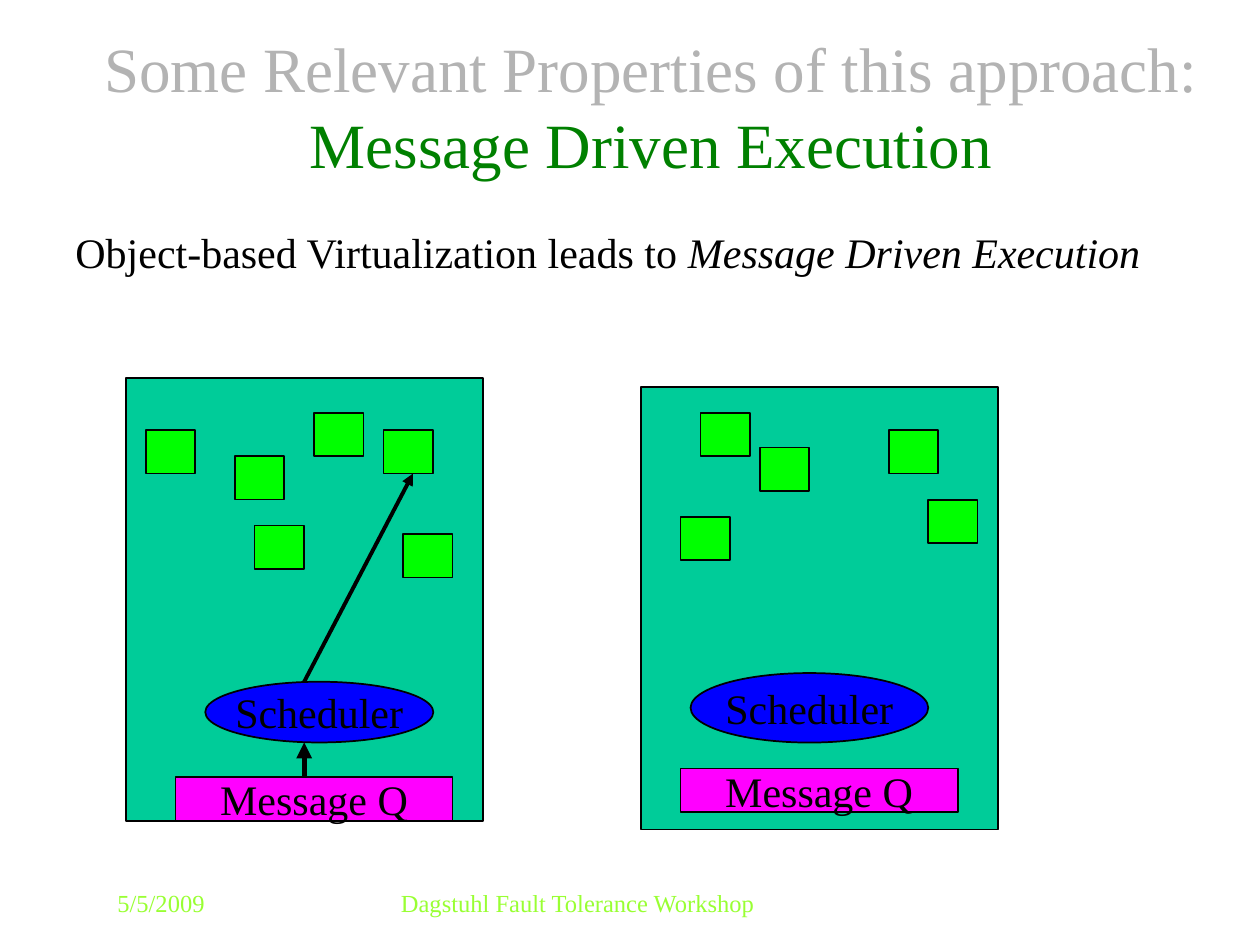
from lxml import etree
from pptx import Presentation
from pptx.dml.color import RGBColor
from pptx.enum.shapes import MSO_CONNECTOR, MSO_SHAPE
from pptx.enum.text import MSO_ANCHOR, PP_ALIGN
from pptx.oxml.ns import qn
from pptx.util import Pt

FONT = "Times New Roman"
BLACK = RGBColor(0x00, 0x00, 0x00)
GRAY = RGBColor(0xB3, 0xB3, 0xB3)
DARK_GREEN = RGBColor(0x00, 0x80, 0x00)
LIME = RGBColor(0x99, 0xFF, 0x33)
TEAL = RGBColor(0x00, 0xCC, 0x99)
BLUE = RGBColor(0x00, 0x00, 0xFF)
MAGENTA = RGBColor(0xFF, 0x00, 0xFF)
GREEN = RGBColor(0x00, 0xFF, 0x00)

OBJECT_SIZE = (28.2, 24.8)
QUEUE_SIZE = (158.4, 24.8)


def add_run(paragraph, text, size, color, italic=None):
    run = paragraph.add_run()
    run.text = text
    run.font.name = FONT
    run.font.size = Pt(size)
    run.font.color.rgb = color
    run.font.italic = italic


def add_text(slide, box, anchor=MSO_ANCHOR.TOP):
    """Add an empty wrapping text box and return its first paragraph."""
    frame = slide.shapes.add_textbox(*map(Pt, box)).text_frame
    frame.word_wrap = True
    frame.vertical_anchor = anchor
    return frame.paragraphs[0]


def add_block(slide, kind, box, fill, label=None):
    block = slide.shapes.add_shape(kind, *map(Pt, box))
    block.shadow.inherit = False
    block.fill.solid()
    block.fill.fore_color.rgb = fill
    block.line.color.rgb = BLACK
    block.line.width = Pt(1)
    if label:
        frame = block.text_frame
        frame.word_wrap = False
        frame.vertical_anchor = MSO_ANCHOR.MIDDLE
        frame.paragraphs[0].alignment = PP_ALIGN.CENTER
        add_run(frame.paragraphs[0], label, 24, BLACK)


def add_arrow(slide, start, end, width):
    arrow = slide.shapes.add_connector(
        MSO_CONNECTOR.STRAIGHT, *map(Pt, (*start, *end)))
    arrow.line.color.rgb = BLACK
    arrow.line.width = Pt(width)
    line = arrow.line._get_or_add_ln()
    etree.SubElement(line, qn("a:tailEnd"), type="triangle")
    etree.SubElement(arrow._element.spPr, qn("a:effectLst"))


def add_title(slide, box):
    title = add_text(slide, box, MSO_ANCHOR.MIDDLE)
    title.alignment = PP_ALIGN.CENTER
    add_run(title, "Some Relevant Properties of this approach:", 36, GRAY)
    title.add_line_break()
    add_run(title, "Message Driven Execution", 36, DARK_GREEN)


def add_statement(slide, box):
    statement = add_text(slide, box)
    add_run(statement, "Object-based Virtualization leads to ", 24, BLACK)
    add_run(statement, "Message Driven Execution", 24, BLACK, italic=True)


def add_processor(slide, box, scheduler, queue, objects, arrows=()):
    """Draw one processor; its parts are placed relative to the box corner."""
    left, top = box[:2]

    def place(x, y, *size):
        return (left + x, top + y, *size)

    add_block(slide, MSO_SHAPE.RECTANGLE, box, TEAL)
    add_block(slide, MSO_SHAPE.OVAL, place(*scheduler), BLUE, "Scheduler")
    add_block(slide, MSO_SHAPE.RECTANGLE, place(*queue, *QUEUE_SIZE),
              MAGENTA, "Message Q")
    for corner in objects:
        add_block(slide, MSO_SHAPE.RECTANGLE, place(*corner, *OBJECT_SIZE), GREEN)
    for start, end, width in arrows:
        add_arrow(slide, place(*start), place(*end), width)


def add_footer(slide, date_box, event_box):
    add_run(add_text(slide, date_box), "5/5/2009", 14, LIME)
    add_run(add_text(slide, event_box), "Dagstuhl Fault Tolerance Workshop", 14, LIME)


def main():
    deck = Presentation()
    deck.slide_width, deck.slide_height = Pt(720), Pt(540)
    slide = deck.slides.add_slide(deck.slide_layouts[6])

    add_title(slide, (24, 18, 696, 84))
    add_statement(slide, (36, 126, 636, 36))

    # Left processor, with a message being delivered to an object
    add_processor(
        slide, (72, 216, 204, 253),
        scheduler=(45.3, 173.6, 130.3, 34.7), queue=(28.3, 228.2),
        objects=[(11.3, 29.8), (62.2, 44.6), (107.5, 19.8),
                 (147.1, 29.8), (73.5, 84.3), (158.4, 89.3)],
        arrows=[((101.8, 228.2), (101.8, 208.3), 3),
                ((101.8, 173.6), (164, 54.6), 2.25)])

    # Right processor
    add_processor(
        slide, (366.3, 221, 204, 253),
        scheduler=(28.3, 163.6, 135.8, 39.7), queue=(22.6, 218.2),
        objects=[(34, 14.9), (67.9, 34.7), (141.5, 24.8),
                 (164.1, 64.5), (22.6, 74.4)])

    add_footer(slide, (60, 504, 150, 24), (222, 504, 228, 24))
    deck.save("out.pptx")


if __name__ == "__main__":
    main()
